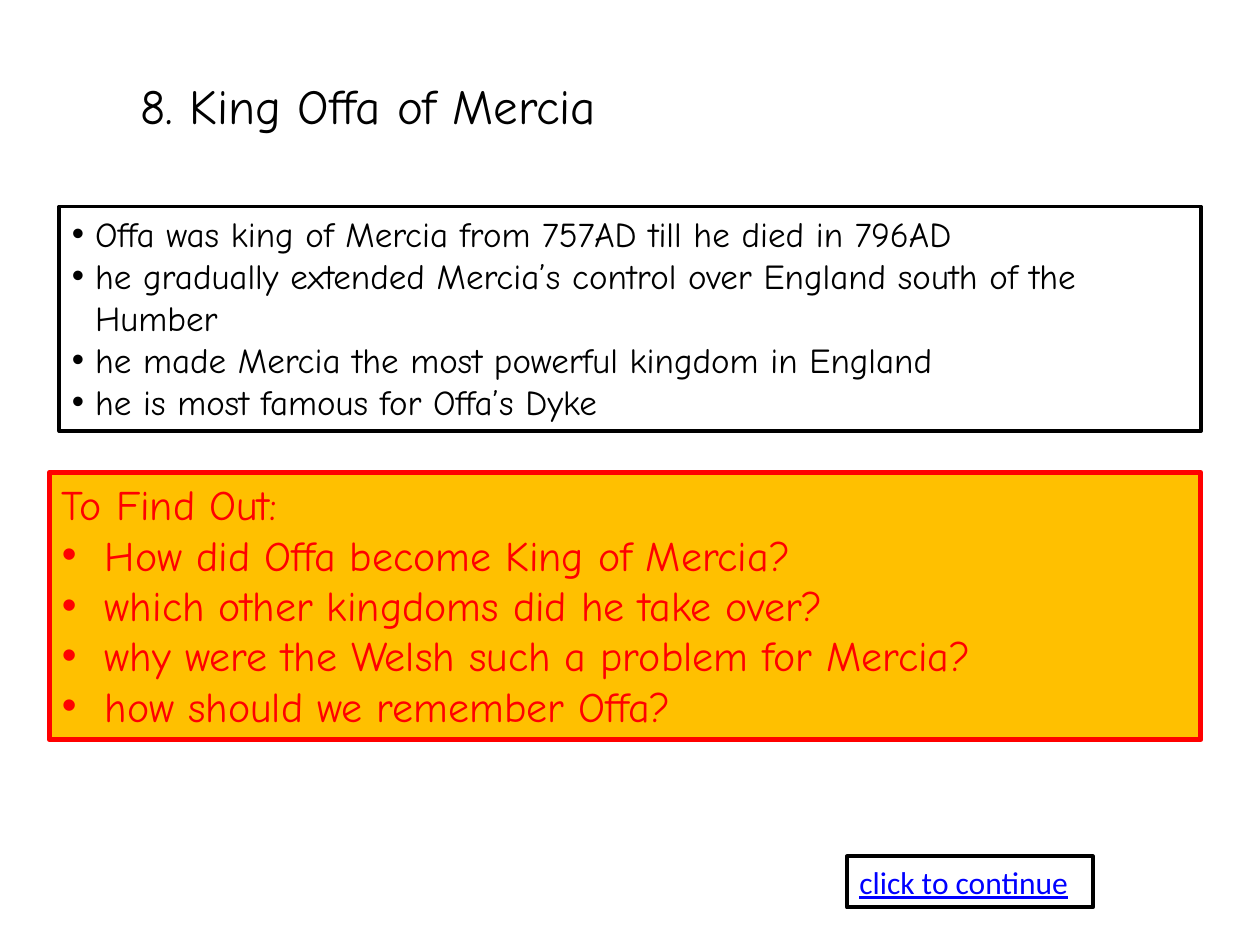
from lxml import etree
from pptx import Presentation
from pptx.dml.color import RGBColor
from pptx.enum import text
from pptx.oxml import ns
from pptx.util import Pt


def color(value):
    return RGBColor.from_string(value)


def set_bullet(paragraph, indent):
    properties = paragraph._p.get_or_add_pPr()
    properties.set("marL", str(Pt(indent)))
    properties.set("indent", str(-Pt(indent)))
    if indent:
        font = etree.SubElement(properties, ns.qn("a:buFont"))
        font.set("typeface", "Arial")
        bullet = etree.SubElement(properties, ns.qn("a:buChar"))
        bullet.set("char", "•")
    else:
        etree.SubElement(properties, ns.qn("a:buNone"))


presentation = Presentation()
presentation.slide_width, presentation.slide_height = Pt(720), Pt(540)
slide = presentation.slides.add_slide(presentation.slide_layouts[1])

# Title and facts use the placeholders, the other boxes are text boxes
title = slide.shapes.title
facts = slide.placeholders[1]
questions = slide.shapes.add_textbox(0, 0, 0, 0)
next_button = slide.shapes.add_textbox(0, 0, 0, 0)

# Wording and format of each box; "indent" is the hanging indent of its bullets
boxes = [
    dict(shape=title, at=(73.2, 39.6, 523.5, 41.2), size=28, font="Comic Neue",
         color="000000", heading="8. King Offa of Mercia"),
    dict(shape=facts, at=(33.9, 118, 652.3, 128.3), size=20, font="Comic Neue",
         color="000000", line=("000000", 2.25), indent=13.2, bullets=[
             "Offa was king of Mercia from 757AD till he died in 796AD",
             "he gradually extended Mercia’s control over England south of the Humber",
             "he made Mercia the most powerful kingdom in England",
             "he is most famous for Offa’s Dyke"]),
    dict(shape=questions, at=(28.2, 270, 658, 152.7), size=24, font="Comic Neue",
         color="FF0000", fill="FFC000", line=("FF0000", 3), indent=24.6,
         heading="To Find Out:", bullets=[
             "How did Offa become King of Mercia?",
             "which other kingdoms did he take over?",
             "why were the Welsh such a problem for Mercia?",
             "how should we remember Offa?"]),
    dict(shape=next_button, at=(484, 489.4, 140.6, 29.1), size=18, font="Calibri",
         color="0000FF", line=("000000", 2.25), underline=True,
         heading="click to continue"),
]

for box in boxes:
    # Position, fill and outline
    shape = box["shape"]
    for name, value in zip(("left", "top", "width", "height"), box["at"]):
        setattr(shape, name, Pt(value))
    if "fill" in box:
        shape.fill.solid()
        shape.fill.fore_color.rgb = color(box["fill"])
    if "line" in box:
        line_color, line_width = box["line"]
        shape.line.color.rgb = color(line_color)
        shape.line.width = Pt(line_width)

    # Text frame, with the box kept at its set height
    frame = shape.text_frame
    frame_format = dict(word_wrap=True, vertical_anchor=text.MSO_ANCHOR.TOP,
                        auto_size=text.MSO_AUTO_SIZE.NONE)
    for name, value in frame_format.items():
        setattr(frame, name, value)

    # Heading, then bullets
    lines = [(box["heading"], 0)] if "heading" in box else []
    lines += [(bullet, box["indent"]) for bullet in box.get("bullets", [])]
    for number, (words, indent) in enumerate(lines):
        paragraph = frame.add_paragraph() if number else frame.paragraphs[0]
        paragraph.alignment = text.PP_ALIGN.LEFT
        paragraph.space_before = Pt(0)
        set_bullet(paragraph, indent)
        run = paragraph.add_run()
        run.text = words
        font_format = dict(name=box["font"], size=Pt(box["size"]),
                           underline=box.get("underline"))
        for name, value in font_format.items():
            setattr(run.font, name, value)
        run.font.color.rgb = color(box["color"])

presentation.save("out.pptx")
